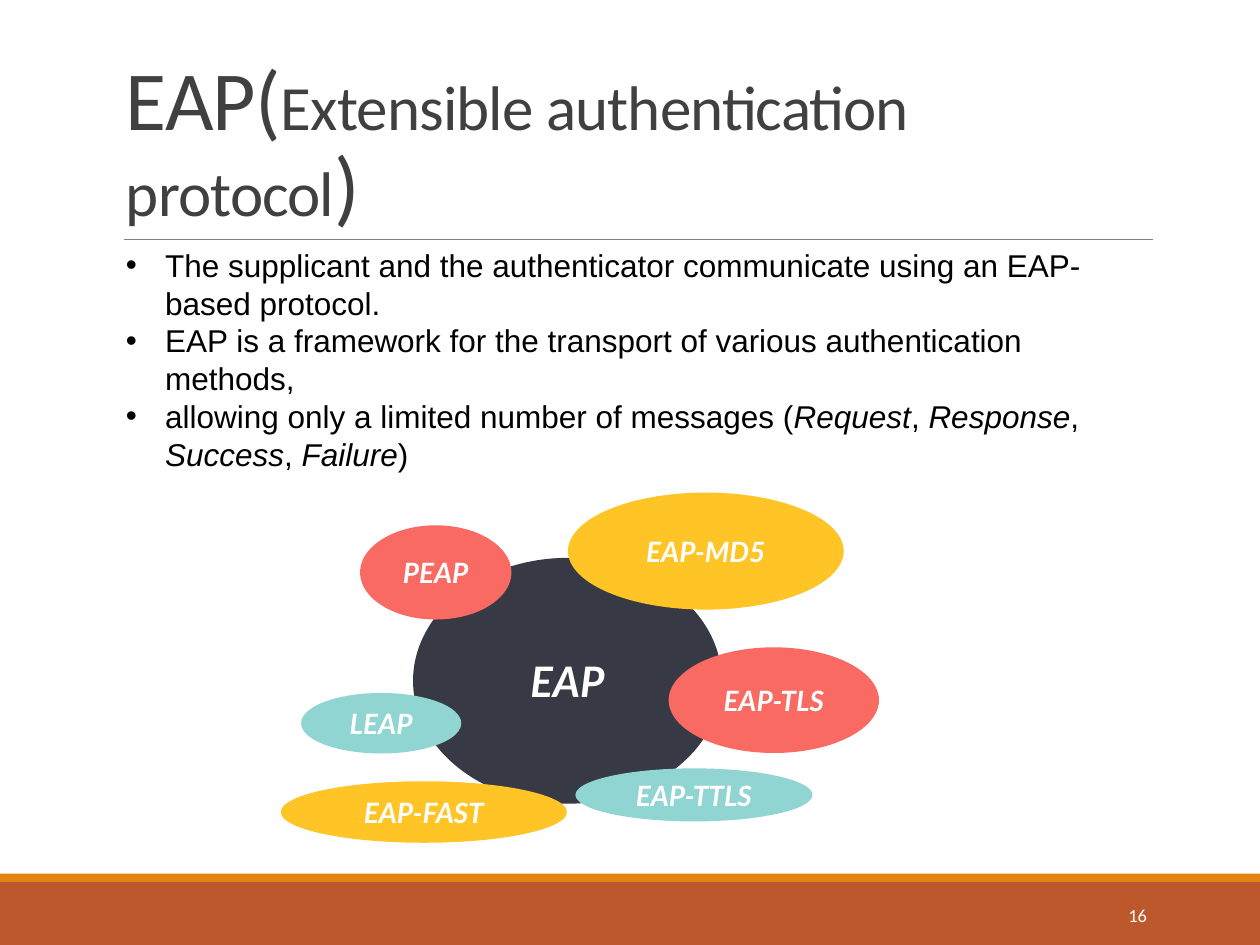
from lxml.etree import SubElement
from pptx import Presentation
from pptx.dml.color import RGBColor
from pptx.enum.shapes import MSO_CONNECTOR, MSO_SHAPE
from pptx.enum.text import MSO_ANCHOR as Anchor, PP_ALIGN as Align
from pptx.oxml.ns import qn
from pptx.util import Cm, Pt

WHITE = RGBColor(0xFF, 0xFF, 0xFF)
BLACK = RGBColor(0x00, 0x00, 0x00)
TITLE_GRAY = RGBColor(0x40, 0x40, 0x40)
RULE_GRAY = RGBColor(0x80, 0x80, 0x80)
RUST = RGBColor(0xBD, 0x58, 0x2C)
ORANGE = RGBColor(0xE4, 0x83, 0x12)
SLATE = RGBColor(0x37, 0x39, 0x45)
YELLOW = RGBColor(0xFF, 0xC4, 0x25)
CORAL = RGBColor(0xF8, 0x6A, 0x62)
TEAL = RGBColor(0x91, 0xD5, 0xD2)

TITLE_RUNS = [("EAP(", 48), ("Extensible authentication protocol", 36), (")", 48)]

# Every second piece of a bullet is italic.
BULLETS = [
    ["The supplicant and the authenticator communicate using an EAP-based protocol."],
    ["EAP is a framework for the transport of various authentication methods,"],
    ["allowing only a limited number of messages (", "Request", ", ", "Response",
     ", ", "Success", ", ", "Failure", ")"],
]

# Label, colour, then left, top, width and height inside the diagram.
METHODS = [
    ("EAP-MD5", YELLOW, 5.79, 0, 5.56, 2.36),
    ("EAP-TLS", CORAL, 7.82, 3.12, 4.24, 2.13),
    ("EAP-TTLS", TEAL, 5.94, 5.56, 4.78, 1.07),
    ("EAP-FAST", YELLOW, 0, 5.82, 5.77, 1.24),
    ("LEAP", TEAL, 0.41, 4.04, 3.23, 1.22),
    ("PEAP", CORAL, 1.6, 0.66, 3.05, 1.9),
]


def format_run(run, font_name, size, color, bold=False, italic=False):
    font = run.font
    font.name, font.size = font_name, Pt(size)
    font.bold, font.italic = bold, italic
    font.color.rgb = color


def add_filled_shape(slide, kind, color, left, top, width, height):
    shape = slide.shapes.add_shape(kind, Cm(left), Cm(top), Cm(width), Cm(height))
    shape.shadow.inherit = False
    shape.fill.solid()
    shape.fill.fore_color.rgb = color
    shape.line.fill.background()
    return shape


def add_text_frame(slide, left, top, width, height, anchor):
    box = slide.shapes.add_textbox(Cm(left), Cm(top), Cm(width), Cm(height))
    box.text_frame.word_wrap = True
    box.text_frame.vertical_anchor = anchor
    return box.text_frame


def add_footer(slide, left, top, width, height, number):
    stripe = 0.17
    add_filled_shape(slide, MSO_SHAPE.RECTANGLE, RUST,
                     left, top + stripe, width, height - stripe)
    add_filled_shape(slide, MSO_SHAPE.RECTANGLE, ORANGE, left, top, width, stripe)
    frame = add_text_frame(slide, left + 20.62, top + 0.32, 2.75, 1.02, Anchor.MIDDLE)
    paragraph = frame.paragraphs[0]
    paragraph.text = number
    paragraph.alignment = Align.RIGHT
    format_run(paragraph.runs[0], "Calibri", 10.5, WHITE)


def add_title(slide, left, top, width, height):
    """Place the title with a thin rule along its lower edge."""
    bottom = Cm(top + height)
    rule = slide.shapes.add_connector(
        MSO_CONNECTOR.STRAIGHT, Cm(left + 0.2), bottom, Cm(left + width), bottom)
    rule.line.color.rgb = RULE_GRAY
    rule.line.width = Pt(0.5)
    SubElement(rule._element.spPr, qn("a:effectLst"))

    frame = add_text_frame(slide, left, top, width, height, Anchor.BOTTOM)
    paragraph = frame.paragraphs[0]
    paragraph.line_spacing = 0.85
    for text, size in TITLE_RUNS:
        run = paragraph.add_run()
        run.text = text
        format_run(run, "Calibri", size, TITLE_GRAY)
        run.font._element.set("spc", "-50")


def add_bullets(slide, left, top, width, height):
    frame = add_text_frame(slide, left, top, width, height, Anchor.TOP)
    indent = Cm(0.79)
    for index, pieces in enumerate(BULLETS):
        paragraph = frame.add_paragraph() if index else frame.paragraphs[0]
        properties = paragraph._p.get_or_add_pPr()
        properties.set("marL", str(indent))
        properties.set("indent", str(-indent))
        SubElement(properties, qn("a:buFont"), typeface="Arial")
        SubElement(properties, qn("a:buChar"), char="•")
        for position, text in enumerate(pieces):
            run = paragraph.add_run()
            run.text = text
            format_run(run, "Arial", 18, BLACK, italic=position % 2 == 1)


def add_bubble(slide, label, color, size, left, top, width, height):
    bubble = add_filled_shape(slide, MSO_SHAPE.OVAL, color, left, top, width, height)
    frame = bubble.text_frame
    frame.margin_left = frame.margin_right = frame.margin_top = frame.margin_bottom = 0
    frame.word_wrap = False
    frame.vertical_anchor = Anchor.MIDDLE
    paragraph = frame.paragraphs[0]
    paragraph.text = label
    paragraph.alignment = Align.CENTER
    format_run(paragraph.runs[0], "Lato", size, WHITE, bold=True, italic=True)
    return bubble


def add_method_diagram(slide, left, top):
    """Draw the EAP core with its methods overlapping the edge."""
    core = add_bubble(slide, "EAP", SLATE, 24, left + 2.72, top + 1.37, 6.12, 4.85)
    core.line.color.rgb = SLATE
    core.line.width = Pt(3)
    for label, color, x, y, width, height in METHODS:
        add_bubble(slide, label, color, 16, left + x, top + y, width, height)


def main():
    presentation = Presentation()
    presentation.slide_width, presentation.slide_height = Cm(25.4), Cm(19.05)
    slide = presentation.slides.add_slide(presentation.slide_layouts[6])
    add_footer(slide, 0, 17.61, 25.4, 1.44, "16")
    add_title(slide, 2.29, 0.79, 20.95, 4.04)
    add_bullets(slide, 2.29, 4.83, 20.95, 4.88)
    add_method_diagram(slide, 5.66, 9.93)
    presentation.save("out.pptx")


if __name__ == "__main__":
    main()
